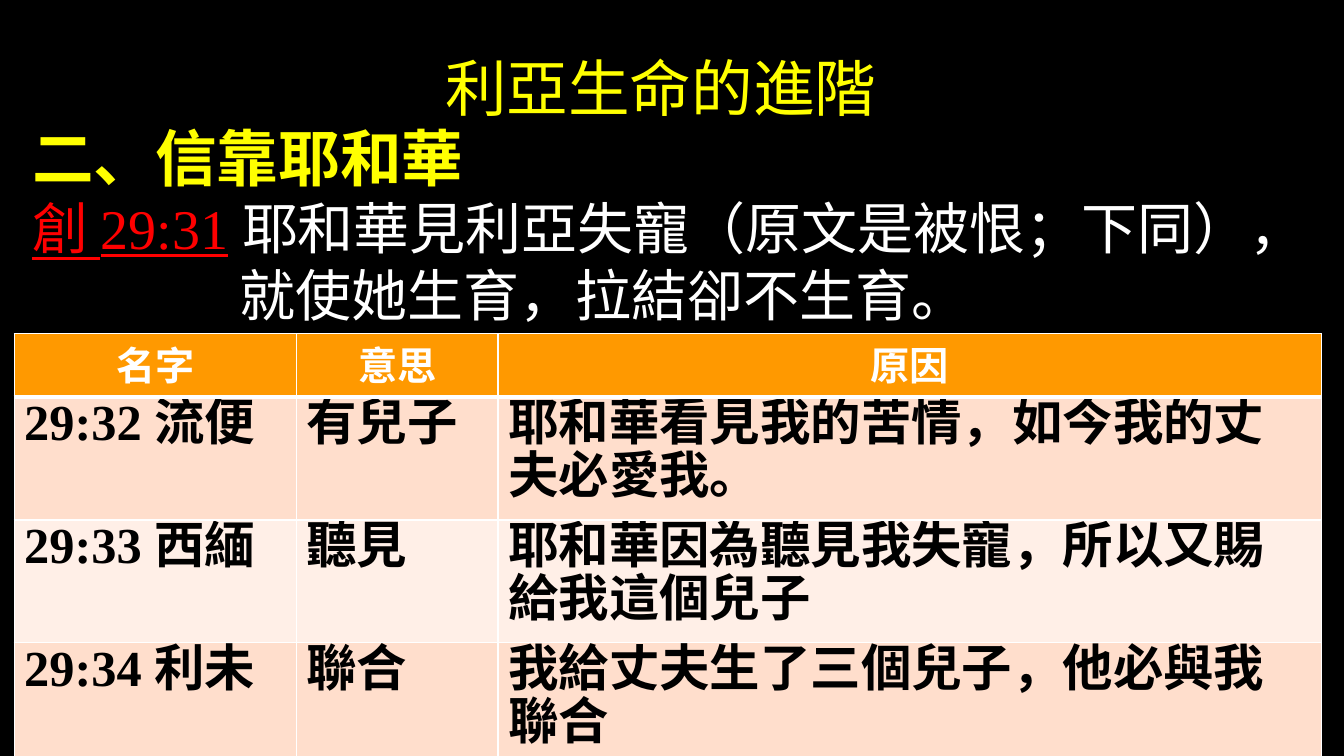
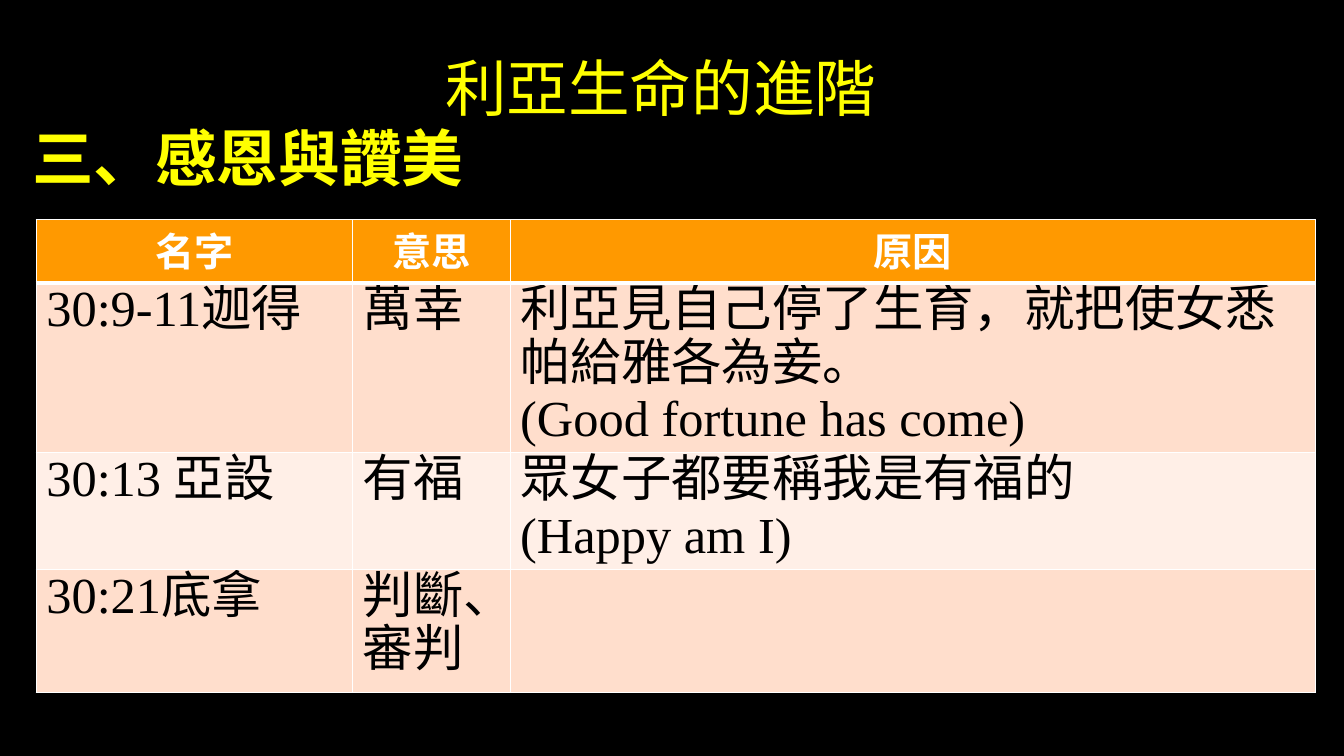
import pptx
import pptx.dml.color
import pptx.enum.text
import pptx.oxml
import pptx.oxml.ns
import pptx.util

Inches = pptx.util.Inches
Pt = pptx.util.Pt
ALIGN = pptx.enum.text.PP_ALIGN
ANCHOR = pptx.enum.text.MSO_ANCHOR

COLORS = {
    "background": "000000",
    "heading": "FFFF00",
    "reference": "FF0000",
    "white": "FFFFFF",
    "cell_text": "000000",
    "header": "FF9900",
    "odd_row": "FFDECC",
    "even_row": "FFEFE7",
}
SERIF = "Times New Roman"
SANS = "Calibri"
TITLE = "利亞生命的進階"
COLUMNS = ["名字", "意思", "原因"]
TITLE_BOX = (0.89, 0.21, 11.33, 1.25)
BODY_BOX = (0.22, 1.14, 12.69, 6.01)

LEAH_SLIDES = [
    {
        "heading": "二、信靠耶和華",
        "verse": ("創 29:31", " 耶和華見利亞失寵（原文是被恨；下同），就使她生育，拉結卻不生育。"),
        "origin": (0.14, 3.31),
        "widths": [2.8, 2, 8.17],
        "heights": [0.62, 1.22, 1.22, 1.22],
        "bold": True,
        "sons": [
            ["29:32 流便", "有兒子", "耶和華看見我的苦情，如今我的丈夫必愛我。"],
            ["29:33 西緬", "聽見", "耶和華因為聽見我失寵，所以又賜給我這個兒子"],
            ["29:34 利未", "聯合", "我給丈夫生了三個兒子，他必與我聯合"],
        ],
    },
    {
        "heading": "三、感恩與讚美",
        "verse": None,
        "origin": (0.36, 2.18),
        "widths": [3.14, 1.56, 7.99],
        "heights": [0.62, 1.68, 1.16, 1.22],
        "bold": False,
        "sons": [
            ["30:9-11迦得", "萬幸", "利亞見自己停了生育，就把使女悉帕給雅各為妾。\n(Good fortune has come)"],
            ["30:13 亞設", "有福", "眾女子都要稱我是有福的\n(Happy am I)"],
            ["30:21底拿", "判斷、審判", ""],
        ],
    },
]


def rgb(name):
    return pptx.dml.color.RGBColor.from_string(COLORS[name])


def style_run(run, size, color, font=SERIF, bold=False, underline=False):
    run.font.name = font
    run.font.size = Pt(size)
    run.font.bold = bold
    run.font.underline = underline
    run.font.color.rgb = rgb(color)


def add_text_frame(slide, box):
    frame = slide.shapes.add_textbox(*map(Inches, box)).text_frame
    frame.word_wrap = True
    return frame


def hang(paragraph, indent):
    properties = paragraph._p.get_or_add_pPr()
    properties.set("marL", str(Inches(indent)))
    properties.set("indent", str(-Inches(indent)))


def add_title(slide, box):
    frame = add_text_frame(slide, box)
    frame.vertical_anchor = ANCHOR.MIDDLE
    title = frame.paragraphs[0]
    title.text = TITLE
    title.alignment = ALIGN.CENTER
    title.line_spacing = 1.07
    style_run(title.runs[0], 44, "heading")


def add_body(slide, box, heading_text, verse):
    frame = add_text_frame(slide, box)
    heading = frame.paragraphs[0]
    heading.text = heading_text
    hang(heading, 1.37)
    style_run(heading.runs[0], 44, "heading", SANS, bold=True)
    if verse:
        scripture = frame.add_paragraph()
        hang(scripture, 2.06)
        for text, color, underline in zip(verse, ("reference", "white"), (True, False)):
            run = scripture.add_run()
            run.text = text
            style_run(run, 40, color, underline=underline)


def set_borders(cell, widths):
    properties = cell._tc.get_or_add_tcPr()
    for side, width in zip("LRTB", widths):
        properties.append(pptx.oxml.parse_xml(
            f'<a:ln{side} {pptx.oxml.ns.nsdecls("a")} w="{Pt(width)}"><a:solidFill>'
            f'<a:srgbClr val="{COLORS["white"]}"/></a:solidFill></a:ln{side}>'))


def fill_cell(cell, text, row, bold):
    is_header = row == 0
    set_borders(cell, (1, 1, 3 if row == 1 else 1, 3 if is_header else 1))
    cell.fill.solid()
    cell.fill.fore_color.rgb = rgb("header" if is_header else "odd_row" if row % 2 else "even_row")
    paragraph = cell.text_frame.paragraphs[0]
    paragraph.text = text
    paragraph.line_spacing = Pt(38)
    paragraph.alignment = ALIGN.CENTER if is_header else ALIGN.LEFT
    for run in paragraph.runs:
        if is_header:
            style_run(run, 28, "white", bold=True)
        else:
            style_run(run, 36, "cell_text", bold=bold)


def add_sons_table(slide, origin, widths, heights, sons, bold):
    rows = [COLUMNS] + sons
    box = (*origin, sum(widths), sum(heights))
    table = slide.shapes.add_table(len(rows), len(COLUMNS), *map(Inches, box)).table
    for column, width in zip(table.columns, widths):
        column.width = Inches(width)
    for index, (row, height) in enumerate(zip(rows, heights)):
        table.rows[index].height = Inches(height)
        for position, text in enumerate(row):
            fill_cell(table.cell(index, position), text, index, bold)


def add_leah_slide(deck, content):
    slide = deck.slides.add_slide(deck.slide_layouts[6])
    slide.background.fill.solid()
    slide.background.fill.fore_color.rgb = rgb("background")
    add_title(slide, TITLE_BOX)
    add_body(slide, BODY_BOX, content["heading"], content["verse"])
    add_sons_table(slide, content["origin"], content["widths"], content["heights"],
                   content["sons"], content["bold"])


def main():
    deck = pptx.Presentation()
    deck.slide_width = Inches(13.33)
    deck.slide_height = Inches(7.5)
    for content in LEAH_SLIDES:
        add_leah_slide(deck, content)
    deck.save("out.pptx")


if __name__ == "__main__":
    main()
